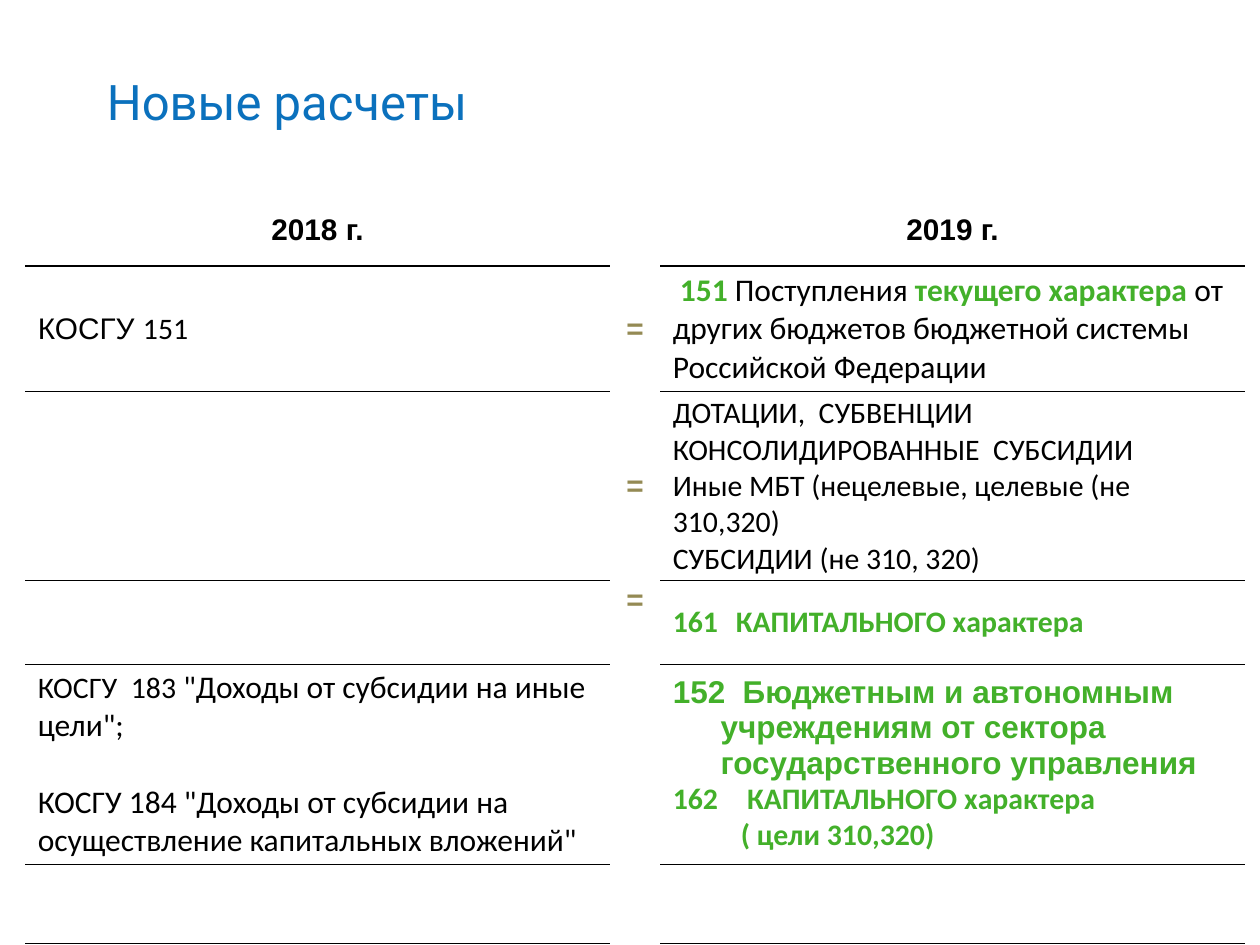
from pptx import Presentation
from pptx.dml.color import RGBColor
from pptx.enum.text import MSO_ANCHOR, PP_ALIGN
from pptx.oxml import parse_xml
from pptx.oxml.ns import nsdecls, qn
from pptx.util import Inches, Pt

THEME = {
    "blue": "0B71BD", "green": "43B02A", "tan": "948A54", "black": "000000",
    "title": 28, "large": 18, "normal": 17,
    "heading_font": "Roboto", "label_font": "Arial", "body_font": "Calibri",
    "heavy_rule": 1.5, "light_rule": 0.5,
    "no_table_style": "{2D5ABB26-0587-4C30-8999-92F81FD0307C}",
}

# Run formats
LABEL = dict(font="label_font", bold=True)
PLAIN_LABEL = dict(font="label_font")
BODY = dict()
LARGE = dict(size="large")
GREEN = dict(color="green", bold=True)
LARGE_GREEN = dict(GREEN, size="large")
EQUALS = dict(LABEL, color="tan")


def line(*runs, **layout):
    return runs, layout


# Content: each cell is a list of lines, each line a set of (text, format) runs
TITLE = "Новые расчеты"
EQUAL_SIGN = [line(("=", EQUALS), align=PP_ALIGN.CENTER)]
ROWS = [
    ([line(("2018 г.", LABEL), align=PP_ALIGN.CENTER)],
     [],
     [line(("2019 г.", LABEL), align=PP_ALIGN.CENTER)]),
    ([line(("КОСГУ ", PLAIN_LABEL), ("151", BODY))],
     EQUAL_SIGN,
     [line((" 151 ", LARGE_GREEN), ("Поступления ", LARGE),
           ("текущего характера ", LARGE_GREEN),
           ("от других бюджетов бюджетной системы Российской Федерации", LARGE))]),
    ([],
     EQUAL_SIGN,
     [line(("ДОТАЦИИ,  СУБВЕНЦИИ", BODY)),
      line(("КОНСОЛИДИРОВАННЫЕ  СУБСИДИИ", BODY)),
      line(("Иные МБТ (нецелевые, целевые (не 310,320)", BODY)),
      line(("СУБСИДИИ (не 310, 320)", BODY))]),
    ([],
     EQUAL_SIGN,
     [line(("161\tКАПИТАЛЬНОГО характера", GREEN), tab=0.52)]),
    ([line(("КОСГУ  183", BODY), (' "Доходы от субсидии на иные цели";', LARGE)),
      line(('КОСГУ 184 "Доходы от субсидии на осуществление капитальных вложений"',
            LARGE), before=22)],
     [],
     [line(("  Бюджетным и автономным учреждениям от сектора "
            "государственного управления", dict(LARGE_GREEN, font="label_font")),
           left=0.38, hanging=0.38, number=152),
      line(("КАПИТАЛЬНОГО характера", GREEN), left=0.59, hanging=0.59, number=162),
      line(("( цели 310,320)", GREEN), left=0.54)]),
    ([], [], []),
]
COLUMN_WIDTHS = [4.64, 0.4, 4.64]
ROW_HEIGHTS = [0.56, 1.0, 1.5, 0.66, 1.59, 0.63]
SIGN_COLUMN = 1
TOP_SIGN_ROW = 3


def add_span(para, text, size="normal", font="body_font", color="black", bold=False):
    span = para.add_run()
    span.text = text
    span.font.size = Pt(THEME[size])
    span.font.name = THEME[font]
    span.font.bold = bold
    span.font.color.rgb = RGBColor.from_string(THEME[color])


def lay_out(para, align=PP_ALIGN.LEFT, before=0, left=0, hanging=0, number=None, tab=None):
    para.alignment = align
    if before:
        para.space_before = Pt(before)
    properties = para._p.get_or_add_pPr()
    properties.set("marL", str(Inches(left)))
    properties.set("indent", str(-Inches(hanging)))
    if number:
        properties.append(parse_xml(
            f'<a:buAutoNum {nsdecls("a")} type="arabicPlain" startAt="{number}"/>'))
    if tab:
        properties.append(parse_xml(
            f'<a:tabLst {nsdecls("a")}><a:tab pos="{Inches(tab)}" algn="l"/></a:tabLst>'))


def write(frame, lines):
    for index, (runs, layout) in enumerate(lines):
        para = frame.add_paragraph() if index else frame.paragraphs[0]
        lay_out(para, **layout)
        for text, style in runs:
            add_span(para, text, **style)


def rule(cell, side, width):
    cell._tc.get_or_add_tcPr().append(parse_xml(
        f'<a:{side} {nsdecls("a")} w="{Pt(width)}"><a:solidFill>'
        f'<a:srgbClr val="{THEME["black"]}"/></a:solidFill></a:{side}>'))


def add_title(page):
    box = page.shapes.add_textbox(Inches(0.75), Inches(0.52), Inches(9.45), Inches(0.57))
    box.text_frame.word_wrap = True
    write(box.text_frame, [line((TITLE, dict(size="title", font="heading_font",
                                             color="blue")))])


def add_comparison(page):
    table = page.shapes.add_table(
        len(ROW_HEIGHTS), len(COLUMN_WIDTHS), Inches(0.2), Inches(1.55),
        Inches(sum(COLUMN_WIDTHS)), Inches(sum(ROW_HEIGHTS))).table
    table.first_row = table.horz_banding = False
    table._tbl.tblPr.find(qn("a:tableStyleId")).text = THEME["no_table_style"]
    for column, width in zip(table.columns, COLUMN_WIDTHS):
        column.width = Inches(width)
    for row, height in zip(table.rows, ROW_HEIGHTS):
        row.height = Inches(height)

    for row_index, row in enumerate(ROWS):
        for column_index, lines in enumerate(row):
            cell = table.cell(row_index, column_index)
            cell.margin_left = cell.margin_right = Inches(0.1)
            cell.margin_top = cell.margin_bottom = Inches(0.02)
            is_sign = column_index == SIGN_COLUMN
            at_top = is_sign and row_index == TOP_SIGN_ROW
            cell.vertical_anchor = MSO_ANCHOR.TOP if at_top else MSO_ANCHOR.MIDDLE
            # Rules run under the two year columns only, heavier below the header
            if not is_sign:
                if row_index:
                    rule(cell, "lnT", THEME["heavy_rule" if row_index == 1 else "light_rule"])
                rule(cell, "lnB", THEME["light_rule" if row_index else "heavy_rule"])
            cell.fill.background()
            write(cell.text_frame, lines)


def main():
    deck = Presentation()
    deck.slide_width, deck.slide_height = Inches(10), Inches(7.5)
    page = deck.slides.add_slide(deck.slide_layouts[6])
    add_title(page)
    add_comparison(page)
    deck.save("out.pptx")


if __name__ == "__main__":
    main()
